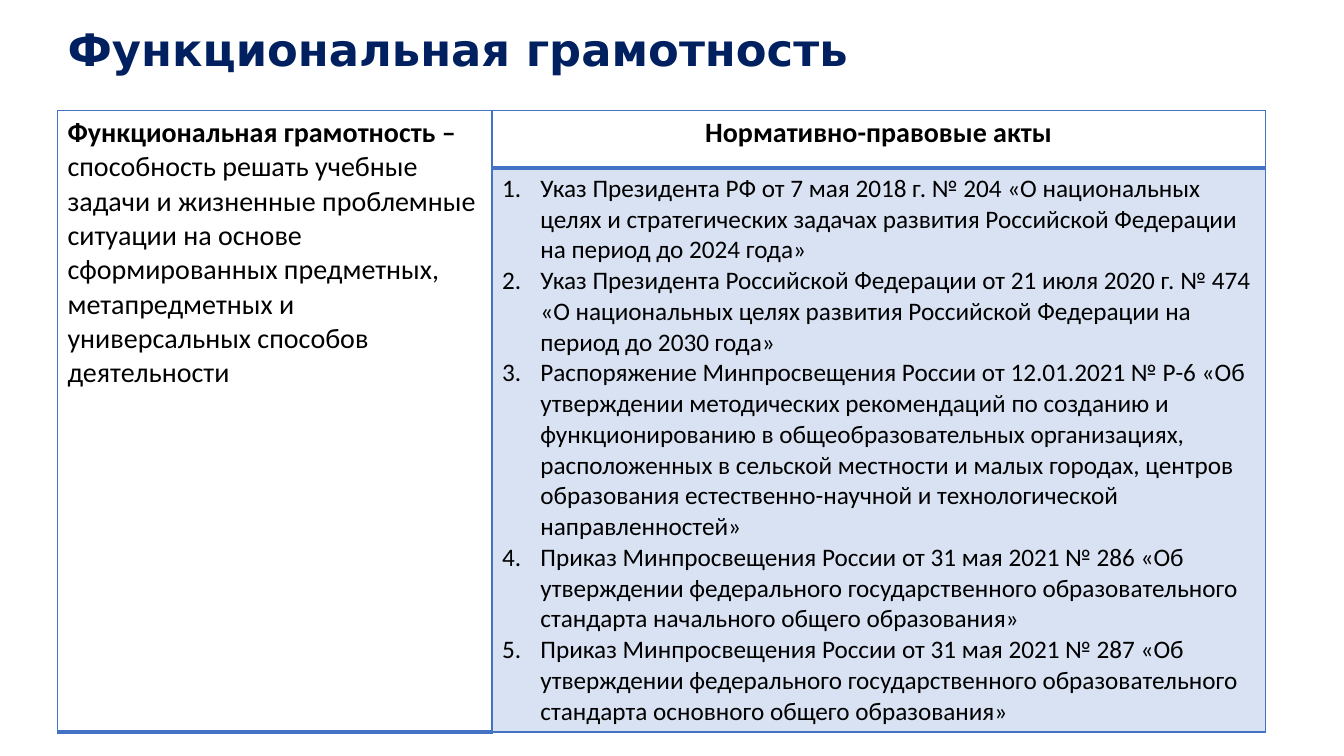
from lxml import etree
from pptx import Presentation
from pptx.dml.color import RGBColor
from pptx.enum.text import MSO_ANCHOR, PP_ALIGN
from pptx.oxml.ns import qn
from pptx.util import Inches, Pt

MIDDLE = MSO_ANCHOR.MIDDLE
LEFT = PP_ALIGN.LEFT
CENTER = PP_ALIGN.CENTER
COLORS = {"title": "002060", "text": "000000", "accent": "4472C4"}
TITLE_ONLY = 5
ACTS = [
    "Указ Президента РФ от 7 мая 2018 г. № 204 «О национальных целях и стратегических задачах развития Российской Федерации на период до 2024 года»",
    "Указ Президента Российской Федерации от 21 июля 2020 г. № 474 «О национальных целях развития Российской Федерации на период до 2030 года»",
    "Распоряжение Минпросвещения России от 12.01.2021 № Р-6 «Об утверждении методических рекомендаций по созданию и функционированию в общеобразовательных организациях, расположенных в сельской местности и малых городах, центров образования естественно-научной и технологической направленностей»",
    "Приказ Минпросвещения России от 31 мая 2021 № 286 «Об утверждении федерального государственного образовательного стандарта начального общего образования»",
    "Приказ Минпросвещения России от 31 мая 2021 № 287 «Об утверждении федерального государственного образовательного стандарта основного общего образования»",
]


def add_span(para, text, size, bold=False, font="Calibri", color="text"):
    span = para.add_run()
    span.text = text
    span.font.name = font
    span.font.size = Pt(size)
    span.font.bold = bold
    span.font.color.rgb = RGBColor.from_string(COLORS[color])


def set_borders(cell, widths):
    properties = cell._tc.get_or_add_tcPr()
    for side, width in zip("LRTB", widths):
        line = etree.SubElement(properties, qn(f"a:ln{side}"), w=str(Pt(width)))
        fill = etree.SubElement(line, qn("a:solidFill"))
        etree.SubElement(fill, qn("a:srgbClr"), val=COLORS["accent"])


deck = Presentation()
deck.slide_width = Inches(13.33)
deck.slide_height = Inches(7.5)
page = deck.slides.add_slide(deck.slide_layouts[TITLE_ONLY])

title = page.shapes.title
title.left, title.top = Inches(0.57), Inches(0.25)
title.width, title.height = Inches(10.1), Inches(0.53)
title.text_frame.vertical_anchor = MIDDLE
title.text_frame.word_wrap = True
para = title.text_frame.paragraphs[0]
para.alignment = LEFT
para.line_spacing = 0.9
add_span(para, "Функциональная грамотность", 32, True, "DejaVu Sans", "title")

frame = page.shapes.add_table(2, 2, Inches(0.57), Inches(1.1), Inches(11.98), Inches(5.91))
table = frame.table
table.first_row = False
table.horz_banding = False
for column, width in zip(table.columns, (4.31, 7.67)):
    column.width = Inches(width)
for row, height in zip(table.rows, (0.57, 5.34)):
    row.height = Inches(height)

definition, heading = table.cell(0, 0), table.cell(0, 1)
lower_left, acts = table.cell(1, 0), table.cell(1, 1)
definition.merge(lower_left)
for cell, bottom in ((definition, 3), (lower_left, 3), (heading, 3)):
    set_borders(cell, (1, 1, 1, bottom))
    cell.fill.background()
set_borders(acts, (1, 1, 3, 1))
acts.fill.solid()
acts.fill.fore_color.rgb = RGBColor.from_string(COLORS["accent"])
tint = acts._tc.tcPr.find(qn("a:solidFill")).find(qn("a:srgbClr"))
etree.SubElement(tint, qn("a:alpha"), val="20000")

para = definition.text_frame.paragraphs[0]
add_span(para, "Функциональная грамотность – ", 20, True)
add_span(
    para,
    "способность решать учебные задачи и жизненные проблемные ситуации на основе сформированных предметных, метапредметных и универсальных способов деятельности",
    20,
)

para = heading.text_frame.paragraphs[0]
para.alignment = CENTER
add_span(para, "Нормативно-правовые акты", 20, True)

for index, act in enumerate(ACTS):
    para = acts.text_frame.add_paragraph() if index else acts.text_frame.paragraphs[0]
    indent = Inches(0.38)
    properties = para._p.get_or_add_pPr()
    properties.set("marL", str(indent))
    properties.set("indent", str(-indent))
    etree.SubElement(properties, qn("a:buFont"), typeface="+mj-lt")
    etree.SubElement(properties, qn("a:buAutoNum"), type="arabicPeriod")
    add_span(para, act, 18)

deck.save("out.pptx")
